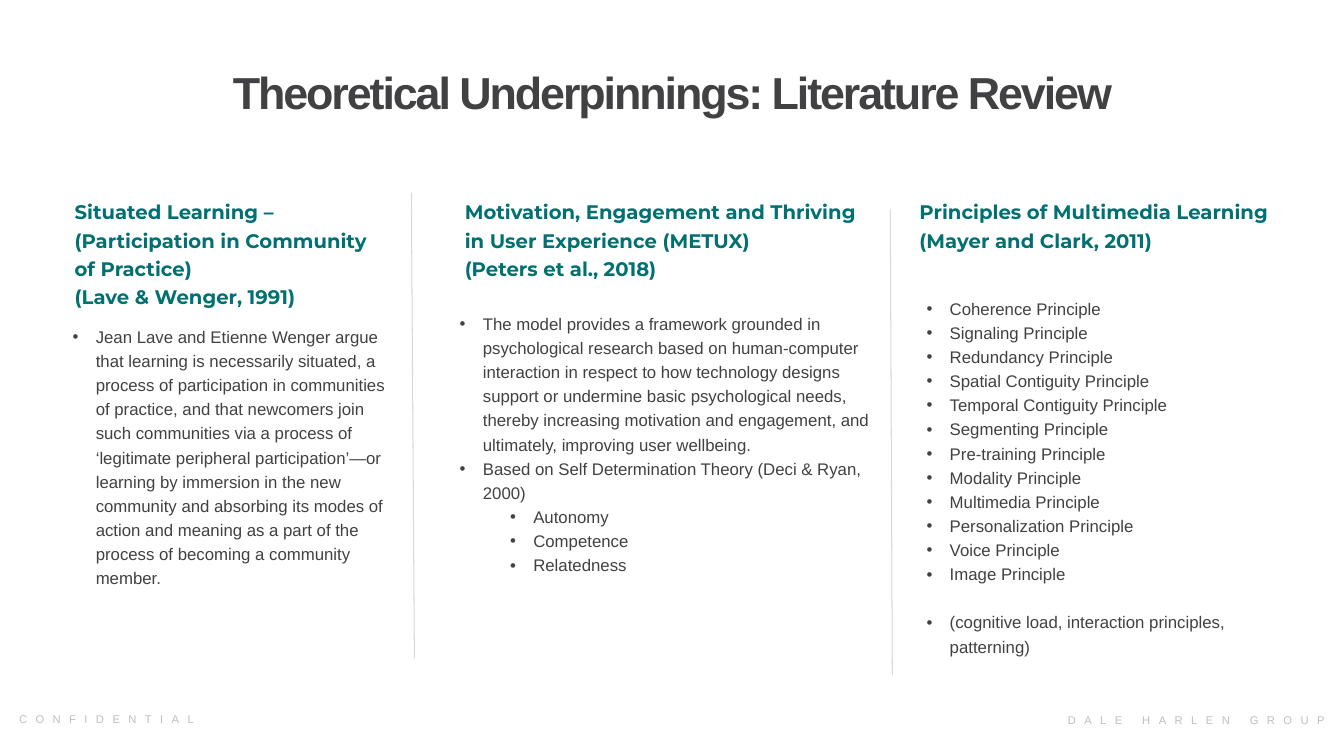
from lxml.etree import SubElement
from pptx import Presentation
from pptx.dml.color import RGBColor
from pptx.enum.shapes import MSO_CONNECTOR
from pptx.enum.text import MSO_ANCHOR, MSO_AUTO_SIZE, PP_ALIGN
from pptx.oxml.ns import qn
from pptx.util import Inches, Pt

DARK, TEAL, GREY, PALE = "414143", "007071", "BFBFBF", "D8D8D8"


def color(code):
    return RGBColor.from_string(code)


class Page:
    """Holds the text style and the current slide."""

    body, head = "Arial", "Montserrat"

    def __init__(self, deck):
        self.slide = deck.slides.add_slide(deck.slide_layouts[5])

    def style(self, para, size, tint, face, bold=False, track=0):
        for run in para.runs:
            font = run.font
            font.name, font.size, font.bold = face, Pt(size), bold
            font.color.rgb = color(tint)
            if track:
                run._r.get_or_add_rPr().set("spc", str(int(track * 100)))

    def title(self, text, *box):
        shape = self.slide.shapes.title
        shape.left, shape.top, shape.width, shape.height = map(Inches, box)
        frame = shape.text_frame
        frame.text = text
        frame.auto_size = MSO_AUTO_SIZE.NONE
        frame.vertical_anchor = MSO_ANCHOR.MIDDLE
        para = frame.paragraphs[0]
        para.alignment, para.line_spacing = PP_ALIGN.CENTER, 0.9
        self.style(para, 32, DARK, self.body, True, -1.5)

    def frame(self, lines, box, inset=True):
        frame = self.slide.shapes.add_textbox(*map(Inches, box)).text_frame
        frame.word_wrap = True
        frame.auto_size = MSO_AUTO_SIZE.SHAPE_TO_FIT_TEXT
        if not inset:
            frame.margin_left = frame.margin_right = 0
            frame.margin_top = frame.margin_bottom = 0
        frame.text = "\n".join(lines)
        return frame

    def footer(self, text, align, *box):
        para = self.frame([text], box).paragraphs[0]
        para.alignment = align
        self.style(para, 8, GREY, self.body, track=6)

    def heading(self, lines, *box):
        for para in self.frame(lines, box, False).paragraphs:
            para.line_spacing = 1.2
            self.style(para, 14, TEAL, self.head, True)

    def bullets(self, items, *box):
        """Each item is (level, text, points of space before)."""
        frame = self.frame([text for _, text, _ in items], box, False)
        for para, (level, _, gap) in zip(frame.paragraphs, items):
            para.level = level
            props = para._p.get_or_add_pPr()
            props.set("marL", str(Inches(0.5 * level - 0.04)))
            props.set("indent", str(Inches(-0.23)))
            tint = SubElement(props, qn("a:buClr"))
            SubElement(tint, qn("a:srgbClr")).set("val", DARK)
            SubElement(props, qn("a:buFont")).set("typeface", self.body)
            SubElement(props, qn("a:buChar")).set("char", "•")
            para.line_spacing = 1.2
            if gap:
                para.space_before = Pt(gap)
            self.style(para, 12, DARK, self.body)

    def rule(self, *ends):
        line = self.slide.shapes.add_connector(
            MSO_CONNECTOR.STRAIGHT, *map(Inches, ends))
        line.line.color.rgb = color(PALE)
        line.line.width = Pt(0.75)
        SubElement(line._element.spPr, qn("a:effectLst"))


def main():
    deck = Presentation()
    deck.slide_width, deck.slide_height = Inches(13.33), Inches(7.5)
    page = Page(deck)

    # Title and footers
    page.title("Theoretical Underpinnings: Literature Review",
               0.92, 0.5, 11.5, 0.88)
    page.footer("DALE HARLEN GROUP", PP_ALIGN.RIGHT, 9.76, 7.03, 3.48, 0.24)
    page.footer("CONFIDENTIAL", PP_ALIGN.LEFT, 0.09, 7.02, 3.48, 0.24)

    # Column rules
    page.rule(4.08, 1.91, 4.11, 6.53)
    page.rule(8.83, 2.08, 8.85, 6.7)

    # Situated learning
    page.heading(["Situated Learning – (Participation in Community of Practice)"
                  "\v(Lave & Wenger, 1991)"], 0.74, 1.94, 3.12, 1.13)
    page.bullets([(1, "Jean Lave and Etienne Wenger argue that learning is "
                   "necessarily situated, a process of participation in "
                   "communities of practice, and that newcomers join such "
                   "communities via a process of ‘legitimate peripheral "
                   "participation’—or learning by immersion in the new "
                   "community and absorbing its modes of action and meaning "
                   "as a part of the process of becoming a community member.",
                   0)], 0.49, 3.2, 3.42, 2.67)

    # Motivation model
    page.heading(["Motivation, Engagement and Thriving in User Experience "
                  "(METUX)", "(Peters et al., 2018)"], 4.61, 1.94, 3.97, 0.85)
    model = [(1, "The model provides a framework grounded in psychological "
              "research based on human-computer interaction in respect to how "
              "technology designs support or undermine basic psychological "
              "needs, thereby increasing motivation and engagement, and "
              "ultimately, improving user wellbeing.", 0),
             (1, "Based on Self Determination Theory (Deci & Ryan, 2000)", 0)]
    needs = [(2, need, 0) for need in ("Autonomy", "Competence", "Relatedness")]
    page.bullets(model + needs, 4.33, 3.07, 4.36, 2.91)

    # Multimedia principles
    page.heading(["Principles of Multimedia Learning",
                  "(Mayer and Clark, 2011)"], 9.12, 1.94, 3.97, 0.57)
    names = ("Coherence", "Signaling", "Redundancy", "Spatial Contiguity",
             "Temporal Contiguity", "Segmenting", "Pre-training", "Modality",
             "Multimedia", "Personalization", "Voice", "Image")
    rules = [(1, f"{name} Principle", 0) for name in names]
    rules.append((1, "(cognitive load, interaction principles, patterning)", 17))
    page.bullets(rules, 8.96, 2.92, 3.81, 4.12)

    deck.save("out.pptx")


if __name__ == "__main__":
    main()
